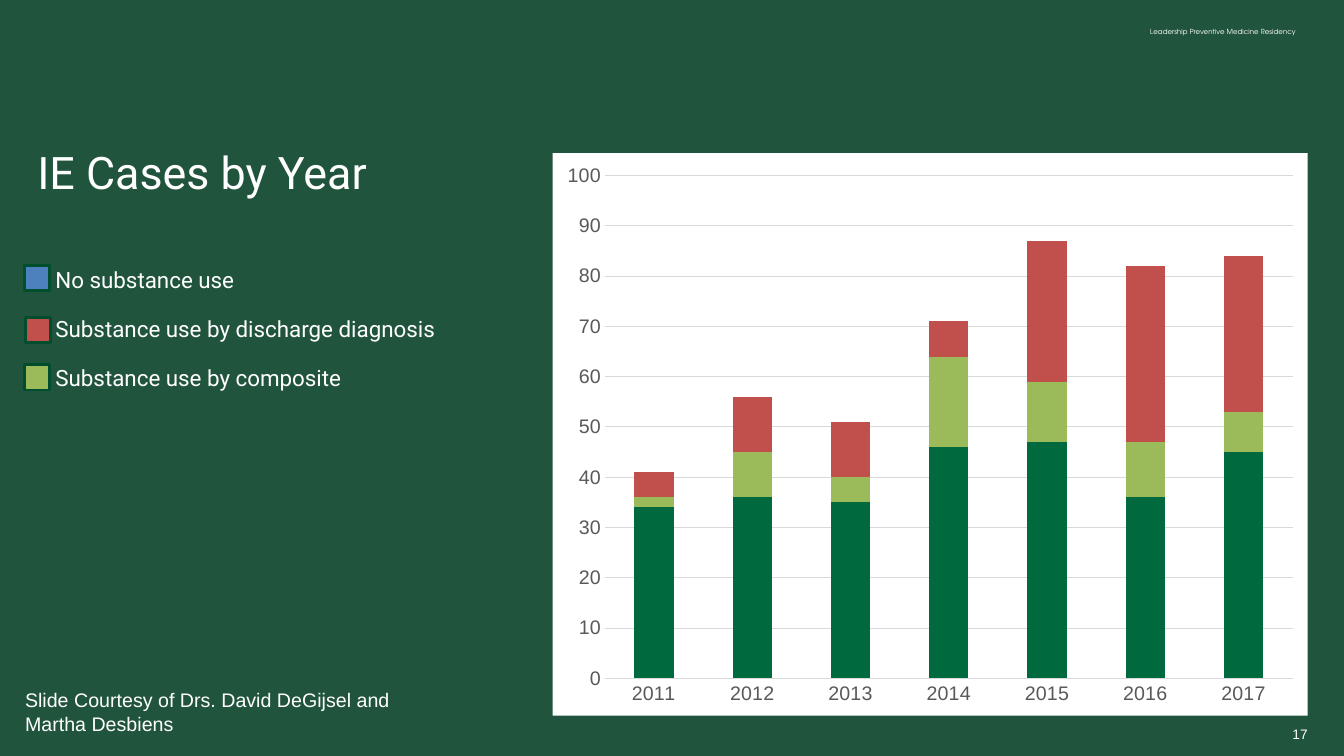
"""Build the IE Cases by Year slide with a stacked column chart and its key."""
from lxml import etree
from pptx import Presentation
from pptx.chart.data import CategoryChartData
from pptx.dml.color import RGBColor
from pptx.enum.chart import XL_CHART_TYPE as CT, XL_TICK_MARK as TM
from pptx.enum.shapes import MSO_SHAPE as SHAPE
from pptx.enum.text import MSO_ANCHOR as ANCHOR, PP_ALIGN as ALIGN
from pptx.oxml import parse_xml
from pptx.oxml.ns import nsdecls, qn
from pptx.util import Inches, Pt

WHITE, GRID, GREY = "FFFFFF", "D9D9D9", "595959"
GREEN, LIME, RED, BLUE = "00693E", "9BBA59", "C1504D", "4D81BD"


def paint(fill, color):
    fill.solid()
    fill.fore_color.rgb = RGBColor.from_string(color)


def write(sp, lines, font, size, box, inset=0, anchor=ANCHOR.TOP, align=ALIGN.LEFT, spacing=1.0, gap=0):
    sp.left, sp.top, sp.width, sp.height = [Inches(v) for v in box]
    tf = sp.text_frame
    tf.text = "\n".join(lines)
    tf.word_wrap = True
    tf.vertical_anchor = anchor
    tf.margin_left = tf.margin_right = Inches(inset)
    tf.margin_top = tf.margin_bottom = Inches(inset / 2)
    for p in tf.paragraphs:
        p.alignment, p.line_spacing = align, spacing
        p.space_before = p.space_after = Pt(gap)
        for r in p.runs:
            r.font.name, r.font.size = font, Pt(size)
            r.font.color.rgb = RGBColor.from_string(WHITE)


prs = Presentation()
prs.slide_width, prs.slide_height = Inches(13.33), Inches(7.5)
s = prs.slides.add_slide(prs.slide_layouts[5])
paint(s.background.fill, "21543D")

write(s.shapes.title, ["IE Cases by Year"], "Roboto", 32, (0.37, 1.52, 4.75, 1.01), spacing=0.85)

key = [("No substance use", BLUE, 0.24, 2.63),
       ("Substance use by discharge diagnosis", RED, 0.25, 3.15),
       ("Substance use by composite", LIME, 0.24, 3.62)]
texts = [
    (["Leadership Preventive Medicine Residency"], "TeX Gyre Adventor", 5, (11.31, 0.27, 1.9, 0.09),
     dict(inset=0.1, anchor=ANCHOR.MIDDLE, spacing=0.9)),
    ([label for label, *_ in key], "Roboto", 16, (0.55, 2.59, 4.56, 4.1), dict(spacing=1.2, gap=6)),
    (["17"], "Arial", 9.8, (12.4, 7.16, 0.57, 0.24), dict(anchor=ANCHOR.MIDDLE, align=ALIGN.RIGHT)),
    (["Slide Courtesy of Drs. David DeGijsel and Martha Desbiens"], "Arial", 14,
     (0.15, 6.78, 4.45, 0.57), dict(inset=0.1)),
]
for lines, font, size, box, options in texts:
    write(s.shapes.add_textbox(0, 0, 0, 0), lines, font, size, box, **options)

for _, color, x, y in key:
    sp = s.shapes.add_shape(SHAPE.RECTANGLE, Inches(x), Inches(y), Inches(0.25), Inches(0.25))
    sp.shadow.inherit = False
    paint(sp.fill, color)
    paint(sp.line.fill, "004E2E")
    sp.line.width = Pt(2)

data = CategoryChartData()
data.categories = [str(year) for year in range(2011, 2018)]
data.add_series("Series 1", (34, 36, 35, 46, 47, 36, 45))
data.add_series("Series 2", (2, 9, 5, 18, 12, 11, 8))
data.add_series("Series 3", (5, 11, 11, 7, 28, 35, 31))
chart = s.shapes.add_chart(CT.COLUMN_STACKED, Inches(5.48), Inches(1.52), Inches(7.49), Inches(5.58), data).chart
chart.has_legend = chart.has_title = False
chart.font.name, chart.font.size = "Arial", Pt(10)

plot = chart.plots[0]
plot.gap_width, plot.overlap, plot.vary_by_categories = 150, 100, False
for series, color in zip(plot.series, (GREEN, LIME, RED)):
    paint(series.format.fill, color)

cats, vals = chart.category_axis, chart.value_axis
for axis in (cats, vals):
    axis.major_tick_mark = axis.minor_tick_mark = TM.NONE
    axis.tick_labels.font.name, axis.tick_labels.font.size = "Arial", Pt(14)
    axis.tick_labels.font.color.rgb = RGBColor.from_string(GREY)
vals.minimum_scale, vals.maximum_scale, vals.major_unit = 0, 100, 10
vals.format.line.fill.background()
for line in (cats.format.line, vals.major_gridlines.format.line):
    paint(line.fill, GRID)
    line.width = Pt(0.75)

area = parse_xml(f'<c:spPr {nsdecls("c", "a")}/>')
fill = etree.SubElement(area, qn("a:solidFill"))
etree.SubElement(fill, qn("a:srgbClr"), val=WHITE)
edge = etree.SubElement(area, qn("a:ln"))
etree.SubElement(edge, qn("a:noFill"))
chart.element.find(qn("c:chart")).addnext(area)

prs.save("out.pptx")
